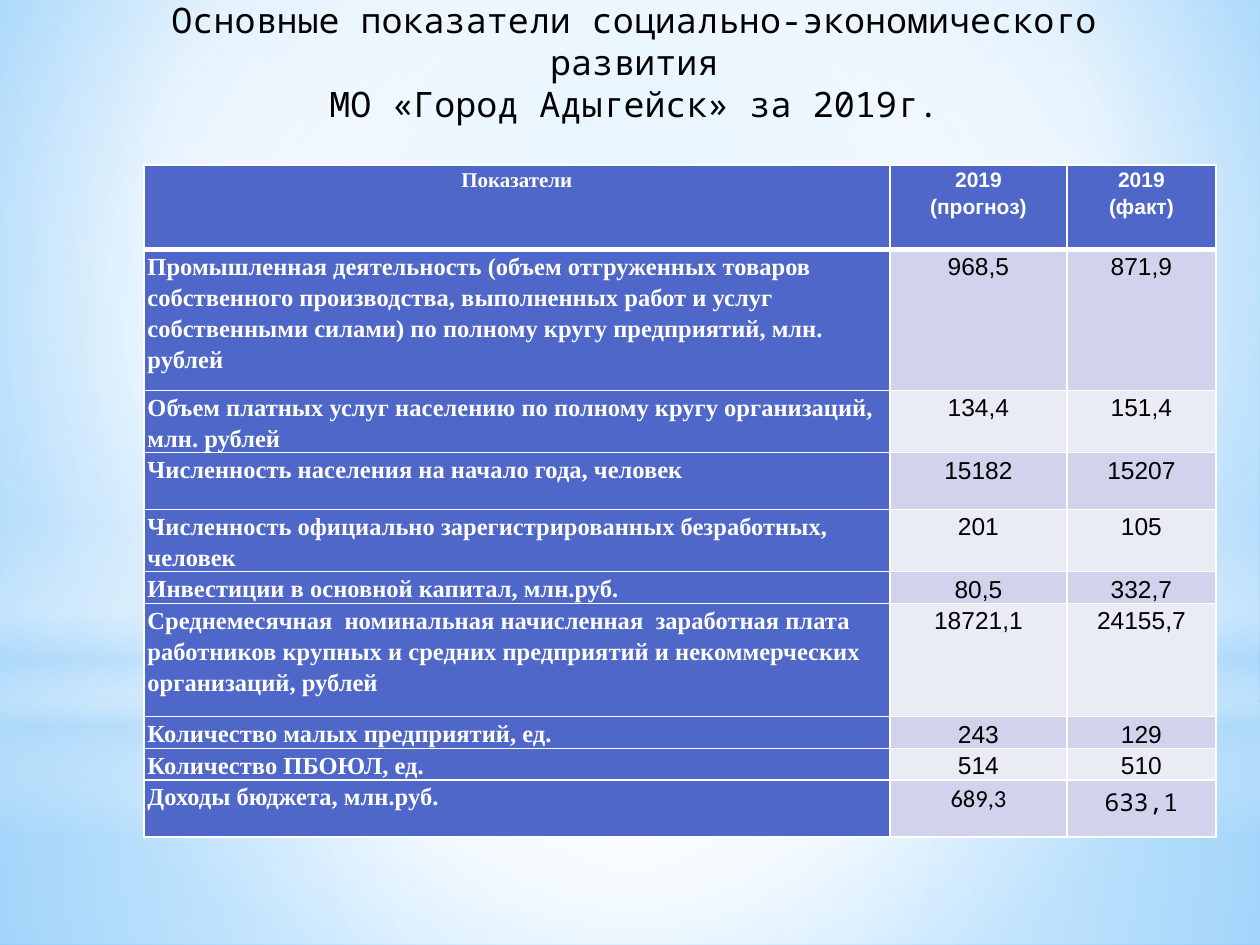
from lxml import etree
from pptx import Presentation
from pptx.dml.color import RGBColor
from pptx.enum.shapes import MSO_SHAPE
from pptx.enum.text import MSO_ANCHOR, MSO_AUTO_SIZE, PP_ALIGN
from pptx.oxml.ns import qn
from pptx.util import Pt

RECT, OVAL = MSO_SHAPE.RECTANGLE, MSO_SHAPE.OVAL
CENTER, LEFT = PP_ALIGN.CENTER, PP_ALIGN.LEFT
MIDDLE, NO_FIT = MSO_ANCHOR.MIDDLE, MSO_AUTO_SIZE.NONE
SERIF, SANS, MONO = "Times New Roman", "Arial", "Noto Sans Mono"
WHITE, BLACK, BLUE = "FFFFFF", "000000", "4E67C8"
BANDS = ("D0D3EB", "E9EBF5")
MIDPOINT = (50, 50, 50, 50)

TITLE = ["Основные показатели социально-экономического развития",
         "МО «Город Адыгейск» за 2019г."]
HEADER = [["Показатели"], ["2019", "(прогноз)"], ["2019", "(факт)"]]
# Indicator, forecast, actual, row height
ROWS = [
    ("Промышленная деятельность (объем отгруженных товаров собственного производства, "
     "выполненных работ и услуг собственными силами) по полному кругу предприятий, "
     "млн. рублей", "968,5", "871,9", 80.6),
    ("Объем платных услуг населению по полному кругу организаций, млн. рублей",
     "134,4", "151,4", 32.4),
    ("Численность населения на начало года, человек", "15182", "15207", 32.4),
    ("Численность официально зарегистрированных безработных, человек",
     "201", "105", 32.4),
    ("Инвестиции в основной капитал, млн.руб.", "80,5", "332,7", 16),
    ("Среднемесячная  номинальная начисленная  заработная плата  работников крупных "
     "и средних предприятий и некоммерческих организаций, рублей",
     "18721,1", "24155,7", 64.8),
    ("Количество малых предприятий, ед.", "243", "129", 16),
    ("Количество ПБОЮЛ, ед.", "514", "510", 16),
    ("Доходы бюджета, млн.руб.", "689,3", "633,1", 32.4),
]
# Fonts of the last row differ from the other value cells
LAST_FONTS = (SERIF, "Calibri", MONO)


def rgb(color):
    return RGBColor.from_string(color)


def set_gradient(fill, root, stops, focus=None, angle=0):
    """Stops are (position %, colour, opacity %); focus makes it radial."""
    fill.gradient()
    grad = root.find(".//" + qn("a:gradFill"))
    grad.clear()
    grad.set("rotWithShape", "1")
    stop_list = etree.SubElement(grad, qn("a:gsLst"))
    for pos, color, opacity in stops:
        gs = etree.SubElement(stop_list, qn("a:gs"), pos=str(pos * 1000))
        clr = etree.SubElement(gs, qn("a:srgbClr"), val=color)
        if opacity < 100:
            etree.SubElement(clr, qn("a:alpha"), val=str(opacity * 1000))
    if focus:
        path = etree.SubElement(grad, qn("a:path"))
        path.set("path", "circle")
        rect = etree.SubElement(path, qn("a:fillToRect"))
        for side, value in zip("ltrb", focus):
            rect.set(side, str(value * 1000))
    else:
        etree.SubElement(grad, qn("a:lin"), ang=str(angle * 60000), scaled="0")


def add_glow(s, kind, box, stops, **gradient):
    sp = s.shapes.add_shape(kind, *map(Pt, box))
    sp.shadow.inherit = False
    sp.line.fill.background()
    set_gradient(sp.fill, sp.element, stops, **gradient)


def add_backdrop(s, width, height):
    set_gradient(s.background.fill, s.element,
                 [(0, "9ED5FF", 100), (60, WHITE, 100), (100, "5BB9FF", 100)],
                 focus=(20, 10, 20, 60))
    horizon = 401.8
    add_glow(s, RECT, (0, horizon, width, height - horizon),
             [(0, WHITE, 91), (37, WHITE, 76), (100, "B4DCFA", 79)], focus=MIDPOINT)
    add_glow(s, RECT, (0, 0, width, horizon),
             [(0, WHITE, 89), (48, WHITE, 62), (100, "B4DCFA", 79)], focus=MIDPOINT)
    add_glow(s, RECT, (0, 296.6, width, 180),
             [(0, WHITE, 0), (29, WHITE, 30), (45, "B4DCFA", 40),
              (55, WHITE, 26), (65, "B4DCFA", 60), (100, WHITE, 0)], angle=90)
    add_glow(s, OVAL, (0, 126, width, horizon),
             [(0, WHITE, 100), (56, WHITE, 0)], focus=MIDPOINT)


def write(tf, lines, font, size, color, bold=False, align=CENTER, spacing=1.0):
    for i, text in enumerate(lines):
        p = tf.add_paragraph() if i else tf.paragraphs[0]
        p.alignment, p.line_spacing = align, spacing
        p.space_before = p.space_after = Pt(0)
        r = p.add_run()
        r.text = text
        r.font.name, r.font.size, r.font.bold = font, Pt(size), bold
        r.font.color.rgb = rgb(color)


def place_title(s, box):
    title = s.shapes.title
    title.left, title.top, title.width, title.height = map(Pt, box)
    # Bring the title in front of the backdrop
    title.element.getparent().append(title.element)
    tf = title.text_frame
    tf.word_wrap, tf.auto_size, tf.vertical_anchor = True, NO_FIT, MIDDLE
    tf.margin_top, tf.margin_bottom = Pt(3.6), Pt(24)
    write(tf, TITLE, MONO, 20, BLACK)


def style_cell(cell, fill, bottom=1):
    cell.margin_left = cell.margin_right = Pt(2)
    cell.margin_top = cell.margin_bottom = Pt(0)
    tc_pr = cell._tc.get_or_add_tcPr()
    for side, width in (("L", 1), ("R", 1), ("T", 1), ("B", bottom)):
        ln = etree.SubElement(tc_pr, qn("a:ln" + side), w=str(Pt(width)))
        solid = etree.SubElement(ln, qn("a:solidFill"))
        etree.SubElement(solid, qn("a:srgbClr"), val=WHITE)
    cell.fill.solid()
    cell.fill.fore_color.rgb = rgb(fill)


def add_indicators(s, box, col_widths, header_height):
    table = s.shapes.add_table(len(ROWS) + 1, len(HEADER), *map(Pt, box)).table
    for col, width in zip(table.columns, col_widths):
        col.width = Pt(width)
    for row, height in zip(table.rows, [header_height] + [r[-1] for r in ROWS]):
        row.height = Pt(height)
    # Header row
    for c, lines in enumerate(HEADER):
        cell = table.cell(0, c)
        style_cell(cell, BLUE, bottom=3)
        write(cell.text_frame, lines, SANS if c else SERIF, 12, WHITE, True, spacing=1.15)
    # Indicator rows
    for i, (*texts, _) in enumerate(ROWS):
        fonts = LAST_FONTS if i == len(ROWS) - 1 else (SERIF, SANS, SANS)
        for c, (text, font) in enumerate(zip(texts, fonts)):
            cell = table.cell(i + 1, c)
            style_cell(cell, BANDS[i % 2] if c else BLUE, bottom=1)
            write(cell.text_frame, [text], font, 14, BLACK if c else WHITE,
                  bold=c == 0, align=CENTER if c else LEFT, spacing=1.15)
            if i == 0:
                top = cell._tc.tcPr.find(qn("a:lnT"))
                top.set("w", str(Pt(3)))


def main():
    prs = Presentation()
    prs.slide_width, prs.slide_height = Pt(720), Pt(540)
    s = prs.slides.add_slide(prs.slide_layouts[5])
    add_backdrop(s, 720, 540)
    add_indicators(s, (82.3, 94.3, 612, 371), (426.2, 101.3, 85), 48.2)
    place_title(s, (76.3, 6.5, 572.4, 77.8))
    prs.save("out.pptx")


if __name__ == "__main__":
    main()
